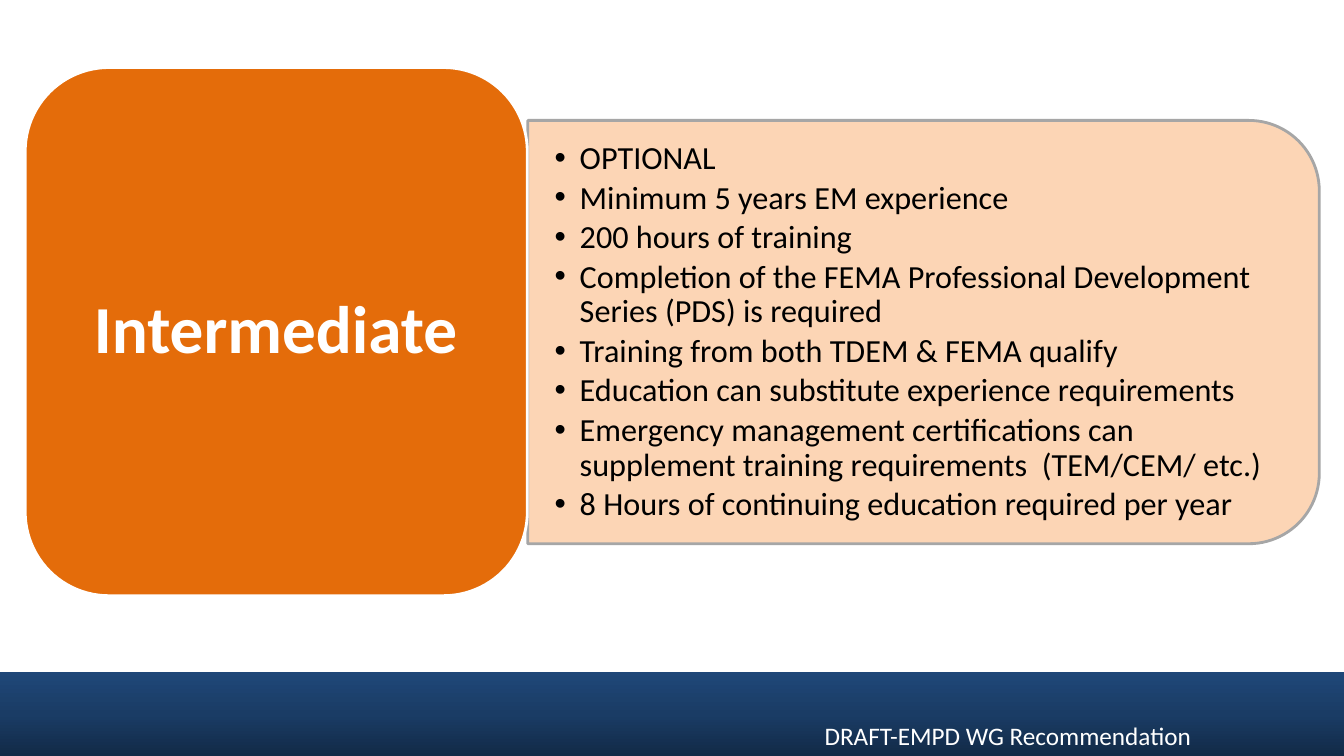
from copy import deepcopy

from lxml.etree import SubElement
from pptx import Presentation
from pptx.dml.color import RGBColor
from pptx.enum.shapes import MSO_SHAPE
from pptx.enum.text import MSO_ANCHOR, MSO_AUTO_SIZE, PP_ALIGN
from pptx.oxml.ns import qn
from pptx.util import Inches, Pt

WHITE = RGBColor(0xFF, 0xFF, 0xFF)
BLACK = RGBColor(0, 0, 0)
ORANGE = RGBColor(0xE4, 0x6C, 0x0A)
PEACH = RGBColor(0xFC, 0xD5, 0xB5)
GREY = RGBColor(0xA6, 0xA6, 0xA6)
BAND_STOPS = [
    (0, RGBColor(0x12, 0x2A, 0x47)),
    (0.5, RGBColor(0x1A, 0x3C, 0x65)),
    (1, RGBColor(0x1F, 0x47, 0x78)),
]
REQUIREMENTS = [
    "OPTIONAL",
    "Minimum 5 years EM experience",
    "200 hours of training",
    "Completion of the FEMA Professional Development Series (PDS) is required",
    "Training from both TDEM & FEMA qualify",
    "Education can substitute experience requirements",
    "Emergency management certifications can supplement training requirements  (TEM/CEM/ etc.)",
    "8 Hours of continuing education required per year",
]


def write(tf, lines, size, color, bold=False, align=PP_ALIGN.LEFT, bullet=False,
          spacing=1.0, after=0, anchor=MSO_ANCHOR.TOP, insets=(0.1, 0.05)):
    """Fill a text frame with formatted paragraphs."""
    tf.word_wrap = True
    tf.auto_size = MSO_AUTO_SIZE.NONE
    tf.vertical_anchor = anchor
    tf.margin_left = tf.margin_right = Inches(insets[0])
    tf.margin_top = tf.margin_bottom = Inches(insets[1])
    for i, line in enumerate(lines):
        p = tf.add_paragraph() if i else tf.paragraphs[0]
        p.alignment = align
        p.line_spacing = spacing
        p.space_before = Pt(0)
        p.space_after = Pt(after)
        if bullet:
            pPr = p._p.get_or_add_pPr()
            pPr.set("marL", str(Inches(0.25)))
            pPr.set("indent", str(-Inches(0.25)))
            SubElement(pPr, qn("a:buFont"), typeface="Arial")
            SubElement(pPr, qn("a:buChar"), char="•")
        r = p.add_run()
        r.text = line
        r.font.name = "Calibri"
        r.font.size = Pt(size)
        r.font.bold = bold
        r.font.color.rgb = color


class Deck:
    """Hold the presentation style and the current slide."""

    def __init__(self):
        self.prs = Presentation()
        self.prs.slide_width = Inches(13.33)
        self.prs.slide_height = Inches(7.5)
        self.s = self.prs.slides.add_slide(self.prs.slide_layouts[5])

    def shape(self, kind, box, fill=None, line=None, rotation=0):
        """Add a preset shape with an optional fill and outline."""
        sp = self.s.shapes.add_shape(kind, *map(Inches, box))
        sp.shadow.inherit = False
        sp.rotation = rotation
        if fill is not None:
            sp.fill.solid()
            sp.fill.fore_color.rgb = fill
        if line is None:
            sp.line.fill.background()
        else:
            sp.line.color.rgb = line
            sp.line.width = Pt(2)
        return sp

    def band(self, box, stops):
        """Add a rectangle with a vertical gradient."""
        fill = self.shape(MSO_SHAPE.RECTANGLE, box).fill
        fill.gradient()
        fill.gradient_angle = 90
        first = fill.gradient_stops[0]._gs
        first.addnext(deepcopy(first))
        for stop, (position, color) in zip(fill.gradient_stops, stops):
            stop.position = position
            stop.color.rgb = color

    def text(self, box, lines, **style):
        """Add a text box."""
        sp = self.s.shapes.add_textbox(*map(Inches, box))
        write(sp.text_frame, lines, **style)

    def title(self, box, text, **style):
        """Place the title in front of the shapes added so far."""
        sp = self.s.shapes.title
        sp.left, sp.top, sp.width, sp.height = map(Inches, box)
        sp._element.getparent().append(sp._element)
        write(sp.text_frame, [text], **style)


def main():
    """Build and save the slide."""
    deck = Deck()
    deck.band((0, 6.67, 13.33, 0.83), BAND_STOPS)
    deck.shape(MSO_SHAPE.ROUND_2_SAME_RECTANGLE, (7.06, -0.63, 4.2, 7.85),
               PEACH, GREY, rotation=90)
    deck.text((5.23, 1.4, 7.65, 3.79), REQUIREMENTS, size=23, color=BLACK, bullet=True,
              spacing=0.9, after=3.4, anchor=MSO_ANCHOR.MIDDLE, insets=(0.27, 0.14))
    deck.shape(MSO_SHAPE.ROUNDED_RECTANGLE, (0.25, 0.67, 4.98, 5.24), ORANGE, WHITE)
    deck.title((0.49, 0.91, 4.49, 4.76), "Intermediate", size=48, color=WHITE, bold=True,
               align=PP_ALIGN.CENTER, spacing=0.9, anchor=MSO_ANCHOR.MIDDLE,
               insets=(0.2, 0.1))
    deck.text((8.08, 7.1, 5.25, 0.4), ["DRAFT-EMPD WG Recommendation"], size=18, color=WHITE)
    deck.prs.save("out.pptx")


if __name__ == "__main__":
    main()
